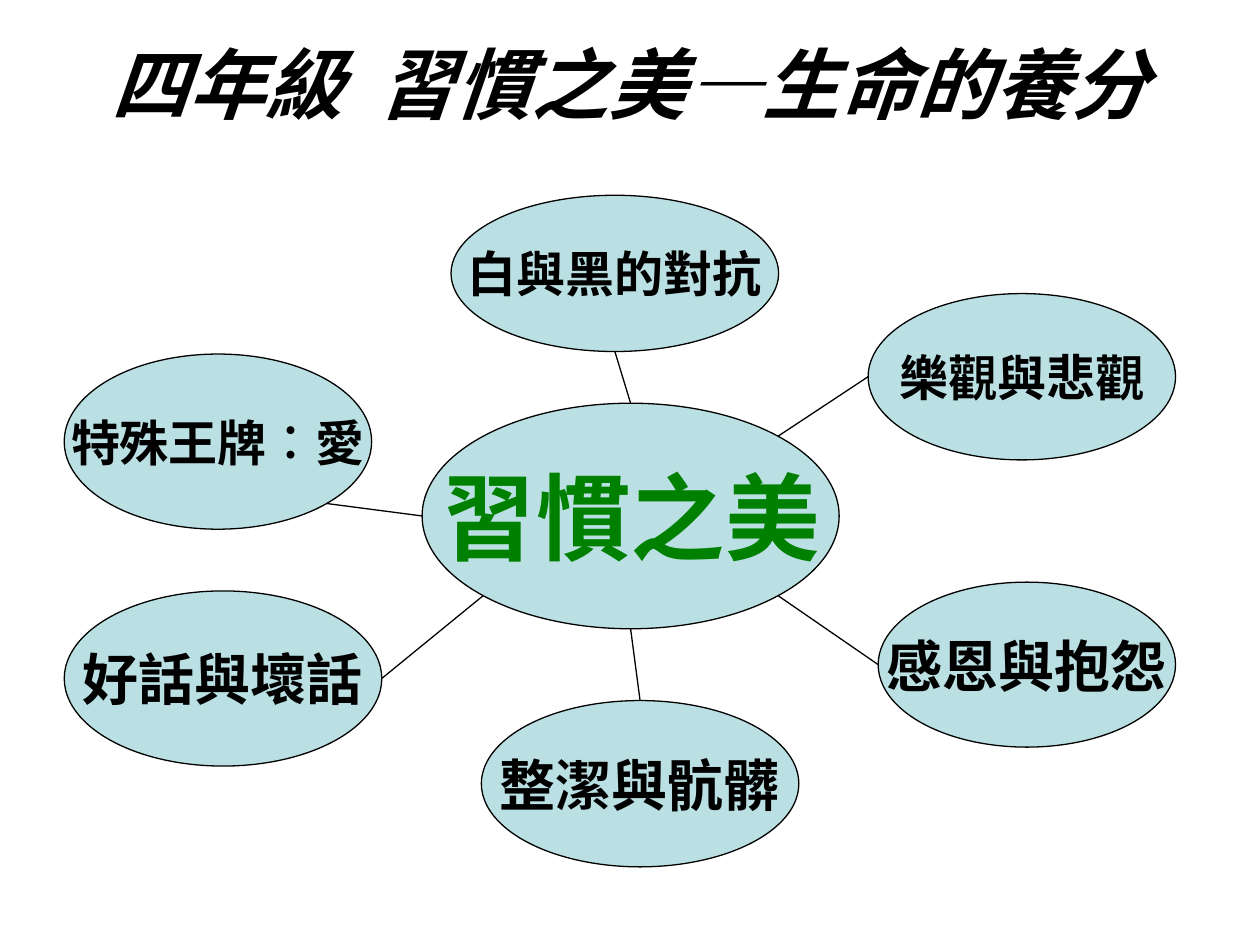
from math import cos, pi, sin

from lxml import etree
from pptx import Presentation
from pptx.dml.color import RGBColor
from pptx.enum.shapes import MSO_CONNECTOR, MSO_SHAPE
from pptx.enum.text import MSO_ANCHOR, PP_ALIGN
from pptx.oxml.ns import qn
from pptx.util import Inches, Pt

OVAL = MSO_SHAPE.OVAL
STRAIGHT = MSO_CONNECTOR.STRAIGHT
MIDDLE = MSO_ANCHOR.MIDDLE
CENTER = PP_ALIGN.CENTER

COLORS = {"ink": "000000", "bubble": "BBE0E3", "topic": "008000"}
TOPIC = ("習慣之美", (3.35, 3.2, 3.31, 1.79))
BRANCHES = [
    ("白與黑的對抗", (3.58, 1.55, 2.6, 1.24), 28, "bottom", "top"),
    ("樂觀與悲觀", (6.89, 2.33, 2.44, 1.32), 28, "left", "top right"),
    ("感恩與抱怨", (6.97, 4.62, 2.36, 1.31), 32, "left", "bottom right"),
    ("整潔與骯髒", (3.82, 5.56, 2.52, 1.32), 32, "top", "bottom"),
    ("好話與壞話", (0.51, 4.69, 2.52, 1.39), 32, "right", "bottom left"),
    ("特殊王牌︰愛", (0.51, 2.81, 2.44, 1.39), 28, "bottom right", "left"),
]
SITES = ["right", "bottom right", "bottom", "bottom left",
         "left", "top left", "top", "top right"]


def rim_point(bounds, site):
    """Return the point of an ellipse's rim at one of its eight sites."""
    left, top, width, height = bounds
    angle = SITES.index(site) * pi / 4
    return left + width / 2 * (1 + cos(angle)), top + height / 2 * (1 + sin(angle))


class MindMap:
    """Draws the parts of a mind map on one slide in a shared style."""

    font = "Arial"
    line_width = Pt(0.75)

    def __init__(self, slide):
        self.shapes = slide.shapes

    def color(self, name):
        return RGBColor.from_string(COLORS[name])

    def label(self, shape, text, size, color="ink", italic=None, wrap=False):
        frame = shape.text_frame
        frame.word_wrap = wrap
        frame.vertical_anchor = MIDDLE
        para = frame.paragraphs[0]
        para.alignment = CENTER
        span = para.add_run()
        span.text = text
        span.font.name = self.font
        span.font.size = Pt(size)
        span.font.bold = True
        span.font.italic = italic
        span.font.color.rgb = self.color(color)

    def outline(self, shape):
        shape.line.color.rgb = self.color("ink")
        shape.line.width = self.line_width

    def title(self, text, bounds, size):
        box = self.shapes.add_textbox(*map(Inches, bounds))
        self.label(box, text, size, italic=True, wrap=True)

    def bubble(self, text, bounds, size, color="ink"):
        oval = self.shapes.add_shape(OVAL, *map(Inches, bounds))
        oval.shadow.inherit = False
        oval.fill.solid()
        oval.fill.fore_color.rgb = self.color("bubble")
        self.outline(oval)
        self.label(oval, text, size, color)

    def link(self, start, end):
        connector = self.shapes.add_connector(STRAIGHT, *map(Inches, start + end))
        self.outline(connector)
        etree.SubElement(connector._element.spPr, qn("a:effectLst"))


def main():
    deck = Presentation()
    deck.slide_width, deck.slide_height = Inches(10), Inches(7.5)
    mind_map = MindMap(deck.slides.add_slide(deck.slide_layouts[6]))

    mind_map.title("四年級  習慣之美—生命的養分", (0.5, 0, 9, 1.31), 44)
    topic_text, topic_bounds = TOPIC
    mind_map.bubble(topic_text, topic_bounds, 54, "topic")
    for text, bounds, size, branch_site, topic_site in BRANCHES:
        mind_map.bubble(text, bounds, size)
        mind_map.link(rim_point(topic_bounds, topic_site), rim_point(bounds, branch_site))

    deck.save("out.pptx")


if __name__ == "__main__":
    main()
